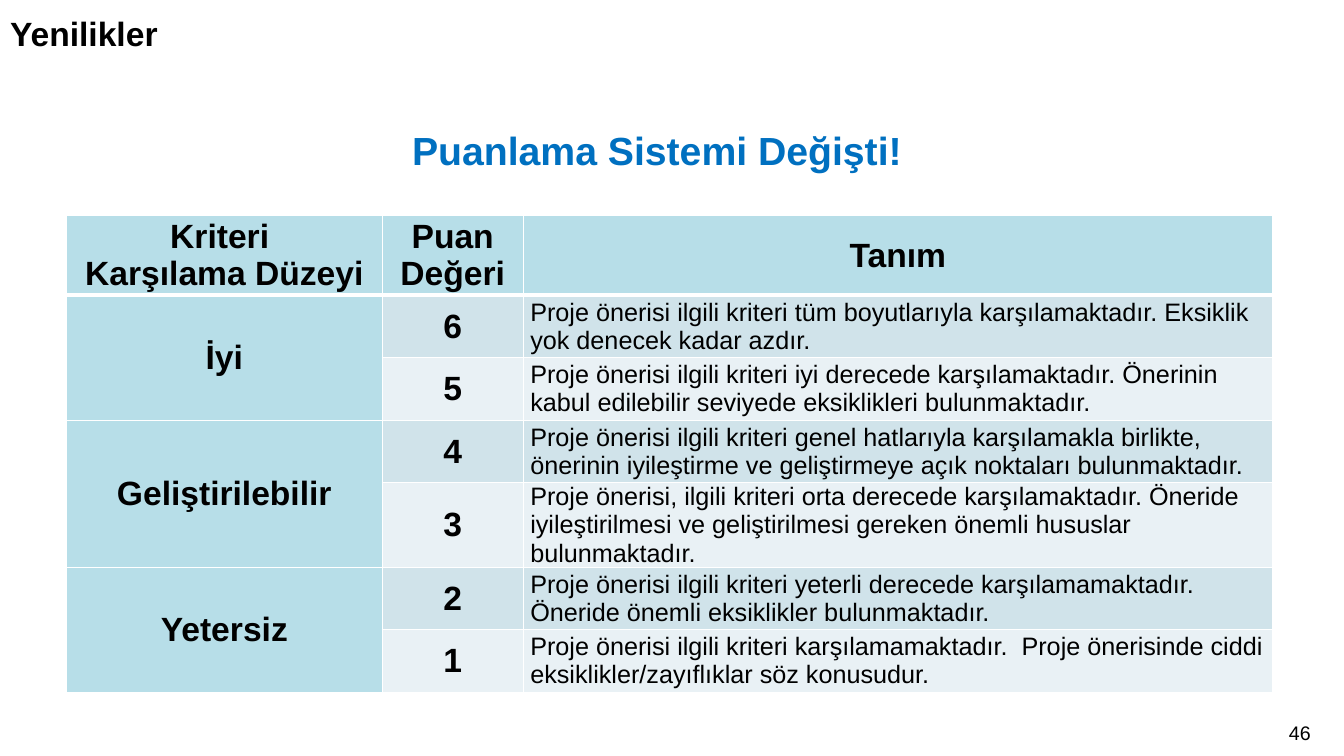
from dataclasses import dataclass

from lxml import etree
from pptx import Presentation
from pptx import util as u
from pptx.dml.color import RGBColor
from pptx.enum import text
from pptx.oxml import ns

FONT = "Arial"
COLOURS = {"ink": "000000", "accent": "0070C0", "border": "FFFFFF",
           "heading": "B7DEE8", "band": "D0E3EA", "pale": "E9F1F5"}
LEFT, CENTER, RIGHT = text.PP_ALIGN.LEFT, text.PP_ALIGN.CENTER, text.PP_ALIGN.RIGHT
MIDDLE, TOP = text.MSO_ANCHOR.MIDDLE, text.MSO_ANCHOR.TOP


@dataclass(frozen=True)
class Style:
    """Look of a paragraph."""
    size: int
    bold: bool = True
    align: text.PP_ALIGN = CENTER
    colour: str = "ink"


@dataclass(frozen=True)
class Level:
    """Degree to which a criterion is met, with its two scores."""
    name: str
    definitions: tuple[str, str]


STRONG = Style(24)
DEFINITION = Style(18, bold=False, align=LEFT)
HEADINGS = ("Kriteri \nKarşılama Düzeyi", "Puan Değeri", "Tanım")
LEVELS = (
    Level("İyi", (
        "Proje önerisi ilgili kriteri tüm boyutlarıyla karşılamaktadır. "
        "Eksiklik yok denecek kadar azdır.",
        "Proje önerisi ilgili kriteri iyi derecede karşılamaktadır. "
        "Önerinin kabul edilebilir seviyede eksiklikleri bulunmaktadır.")),
    Level("Geliştirilebilir", (
        "Proje önerisi ilgili kriteri genel hatlarıyla karşılamakla birlikte, "
        "önerinin iyileştirme ve geliştirmeye açık noktaları bulunmaktadır.",
        "Proje önerisi, ilgili kriteri orta derecede karşılamaktadır. Öneride "
        "iyileştirilmesi ve geliştirilmesi gereken önemli hususlar bulunmaktadır.")),
    Level("Yetersiz", (
        "Proje önerisi ilgili kriteri yeterli derecede karşılamamaktadır. "
        "Öneride önemli eksiklikler bulunmaktadır.",
        "Proje önerisi ilgili kriteri karşılamamaktadır.  "
        "Proje önerisinde ciddi eksiklikler/zayıflıklar söz konusudur.")),
)
COLUMN_WIDTHS = (3.13, 1.4, 7.43)
HEADING_HEIGHT, SCORE_HEIGHT = 0.79, 0.62


def rgb(name: str) -> RGBColor:
    """Return a named colour."""
    return RGBColor.from_string(COLOURS[name])


def write(frame, wording: str, style: Style) -> None:
    """Write one styled paragraph per line of wording."""
    for index, line in enumerate(wording.split("\n")):
        paragraph = frame.add_paragraph() if index else frame.paragraphs[0]
        properties = paragraph._p.get_or_add_pPr()
        properties.set("marL", "0")
        properties.set("indent", "0")
        etree.SubElement(properties, ns.qn("a:buNone"))
        paragraph.alignment = style.align
        paragraph.space_before = u.Pt(0)
        run = paragraph.add_run()
        run.text = line
        run.font.name = FONT
        run.font.size = u.Pt(style.size)
        run.font.bold = style.bold
        run.font.color.rgb = rgb(style.colour)


def fill_box(box, place: tuple[float, float, float, float], wording: str,
             style: Style, anchor: text.MSO_ANCHOR) -> None:
    """Place a text shape and write into it."""
    box.left, box.top, box.width, box.height = map(u.Inches, place)
    frame = box.text_frame
    frame.word_wrap = True
    frame.auto_size = text.MSO_AUTO_SIZE.NONE
    frame.vertical_anchor = anchor
    write(frame, wording, style)


def add_borders(cell, top: int, bottom: int) -> None:
    """Draw the four edges of a cell, with widths in points."""
    properties = cell._tc.get_or_add_tcPr()
    edges = {"lnL": 1, "lnR": 1, "lnT": top, "lnB": bottom}
    for index, (edge, width) in enumerate(edges.items()):
        line = etree.Element(ns.qn(f"a:{edge}"), w=str(u.Pt(width)))
        fill = etree.SubElement(line, ns.qn("a:solidFill"))
        etree.SubElement(fill, ns.qn("a:srgbClr"), val=COLOURS["border"])
        properties.insert(index, line)


def fill_cell(cell, wording: str, style: Style, fill: str) -> None:
    """Fill a table cell and write into it."""
    cell.fill.solid()
    cell.fill.fore_color.rgb = rgb(fill)
    cell.vertical_anchor = MIDDLE
    cell.margin_left = cell.margin_right = u.Inches(0.07)
    cell.margin_top = cell.margin_bottom = 0
    write(cell.text_frame, wording, style)


def add_scores(slide) -> None:
    """Add the table of levels, scores and definitions."""
    score_count = sum(len(level.definitions) for level in LEVELS)
    height = HEADING_HEIGHT + score_count * SCORE_HEIGHT
    scores = slide.shapes.add_table(
        score_count + 1, len(COLUMN_WIDTHS), u.Inches(0.66), u.Inches(2.14),
        u.Inches(sum(COLUMN_WIDTHS)), u.Inches(height)).table
    scores.horz_banding = False
    for column, width in zip(scores.columns, COLUMN_WIDTHS):
        column.width = u.Inches(width)
    for index, row in enumerate(scores.rows):
        row.height = u.Inches(SCORE_HEIGHT if index else HEADING_HEIGHT)
        for cell in row.cells:
            add_borders(cell, top=3 if index == 1 else 1, bottom=1 if index else 3)
    for column, heading in enumerate(HEADINGS):
        fill_cell(scores.cell(0, column), heading, STRONG, "heading")
    row = 1
    for level in LEVELS:
        name_cell = scores.cell(row, 0)
        name_cell.merge(scores.cell(row + len(level.definitions) - 1, 0))
        fill_cell(name_cell, level.name, STRONG, "heading")
        for definition, fill in zip(level.definitions, ("band", "pale")):
            fill_cell(scores.cell(row, 1), str(score_count + 1 - row), STRONG, fill)
            fill_cell(scores.cell(row, 2), definition, DEFINITION, fill)
            row += 1


def main() -> None:
    """Build and save the slide."""
    deck = Presentation()
    deck.slide_width, deck.slide_height = u.Inches(13.33), u.Inches(7.5)
    slide = deck.slides.add_slide(deck.slide_layouts[1])
    title, announcement = slide.placeholders
    fill_box(announcement, (0.89, 1.2, 11.25, 0.65), "Puanlama Sistemi Değişti!",
             Style(28, colour="accent"), TOP)
    add_scores(slide)
    fill_box(title, (0, 0, 11.37, 0.66), "Yenilikler", Style(24, align=LEFT), MIDDLE)
    page_number = slide.shapes.add_textbox(0, 0, 0, 0)
    fill_box(page_number, (10.36, 7.1, 2.74, 0.4), "46",
             Style(14, bold=False, align=RIGHT), TOP)
    deck.save("out.pptx")


if __name__ == "__main__":
    main()
